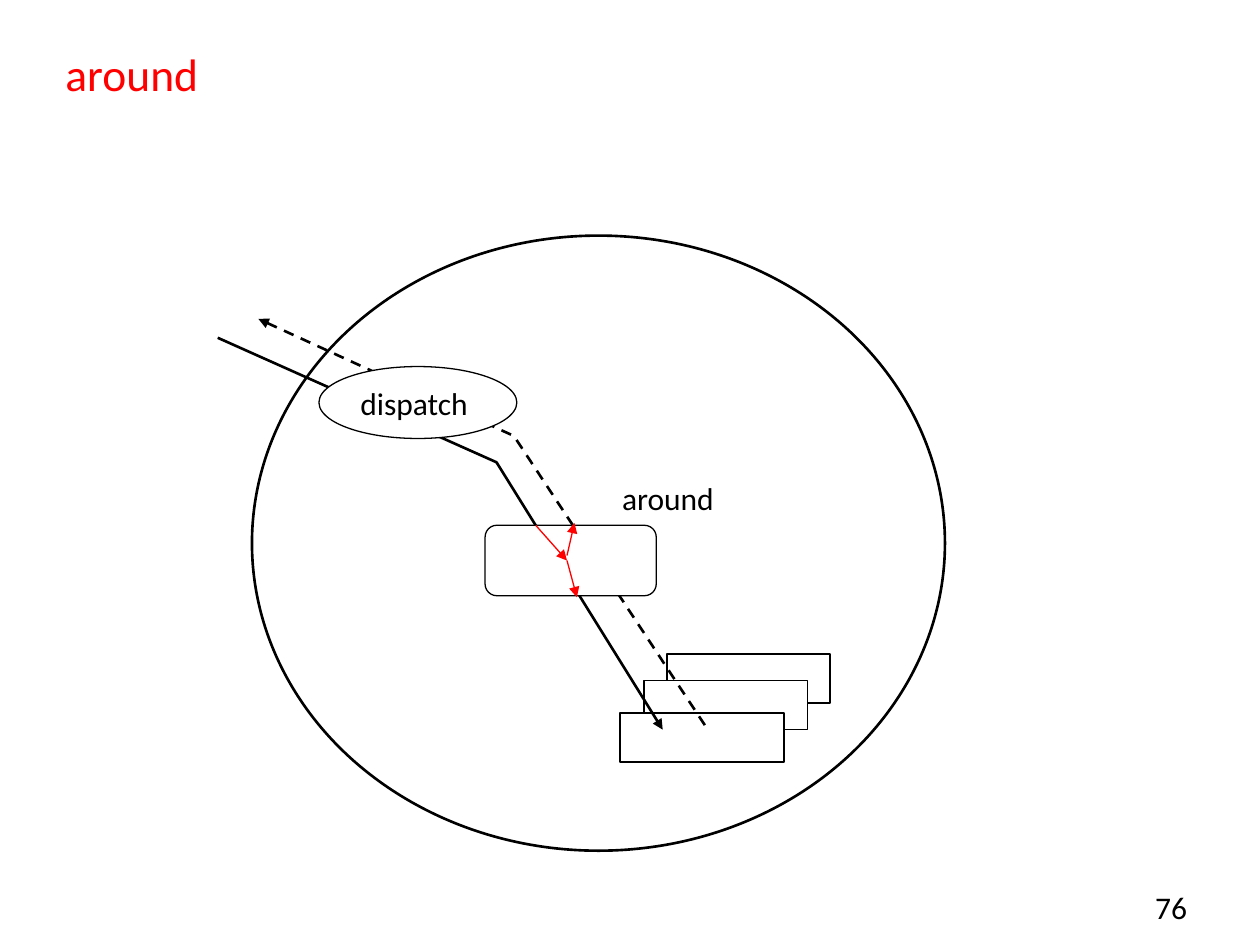
from dataclasses import dataclass

import pptx
import pptx.dml.color
import pptx.enum.dml
import pptx.enum.shapes
import pptx.enum.text
import pptx.oxml
import pptx.oxml.ns
import pptx.util

Cm = pptx.util.Cm
Kind = pptx.enum.shapes.MSO_SHAPE
Align = pptx.enum.text.PP_ALIGN
Anchor = pptx.enum.text.MSO_ANCHOR

FONT = "Calibri"
COLORS = {"ink": "000000", "red": "FF0000", "paper": "FFFFFF"}


@dataclass
class Box:
    left: float
    top: float
    width: float
    height: float

    def lengths(self) -> list:
        return [Cm(v) for v in (self.left, self.top, self.width, self.height)]


@dataclass
class Node:
    kind: int
    box: Box
    weight: float
    filled: bool = True
    text: str = ""


@dataclass
class Label:
    text: str
    box: Box
    size: int = 18
    color: str = "ink"
    align: int = Align.LEFT
    anchor: int = Anchor.TOP
    wrap: bool = True
    right: float = 0.25


@dataclass
class Route:
    points: list
    end: str
    dashed: bool = False


@dataclass
class Arrow:
    start: tuple
    stop: tuple


def rgb(name: str):
    return pptx.dml.color.RGBColor.from_string(COLORS[name])


def write(frame, text: str, size: int = 18, color: str = "ink",
          align: int = Align.LEFT) -> None:
    frame.text = text
    para = frame.paragraphs[0]
    para.alignment = align
    font = para.runs[0].font
    font.name = FONT
    font.size = pptx.util.Pt(size)
    font.color.rgb = rgb(color)


def stroke(item, weight: float, color: str = "ink") -> None:
    item.line.color.rgb = rgb(color)
    item.line.width = pptx.util.Pt(weight)


def add_tip(item, end: str) -> None:
    space = pptx.oxml.ns.nsdecls("a")
    tip = pptx.oxml.parse_xml(f'<a:{end} {space} type="triangle"/>')
    item.line._get_or_add_ln().append(tip)


def draw_node(slide, node: Node) -> None:
    shape = slide.shapes.add_shape(node.kind, *node.box.lengths())
    shape.shadow.inherit = False
    stroke(shape, node.weight)
    if node.filled:
        shape.fill.solid()
        shape.fill.fore_color.rgb = rgb("paper")
    else:
        shape.fill.background()
    if node.text:
        write(shape.text_frame, node.text)


def draw_label(slide, label: Label) -> None:
    frame = slide.shapes.add_textbox(*label.box.lengths()).text_frame
    frame.word_wrap = label.wrap
    frame.vertical_anchor = label.anchor
    frame.margin_right = Cm(label.right)
    write(frame, label.text, label.size, label.color, label.align)


def draw_route(slide, route: Route) -> None:
    points = [(Cm(x), Cm(y)) for x, y in route.points]
    pen = slide.shapes.build_freeform(*points[0])
    pen.add_line_segments(points[1:], close=False)
    shape = pen.convert_to_shape()
    shape.shadow.inherit = False
    shape.fill.background()
    stroke(shape, 1.5)
    if route.dashed:
        shape.line.dash_style = pptx.enum.dml.MSO_LINE.DASH
    add_tip(shape, route.end)


def draw_arrow(slide, arrow: Arrow) -> None:
    ends = [Cm(v) for v in arrow.start + arrow.stop]
    line = slide.shapes.add_connector(
        pptx.enum.shapes.MSO_CONNECTOR.STRAIGHT, *ends)
    stroke(line, 0.75, "red")
    add_tip(line, "tailEnd")
    space = pptx.oxml.ns.nsdecls("a")
    line._element.spPr.append(pptx.oxml.parse_xml(f"<a:effectLst {space}/>"))


LABELS = [
    Label("76", Box(22.43, 17.78, 1.9, 1.27), align=Align.RIGHT, right=0.4),
    Label("around", Box(1.07, 0.84, 23.06, 1.27), 26, "red",
          anchor=Anchor.MIDDLE),
    Label("around", Box(12.29, 9.53, 2.39, 1.02), wrap=False),
]
CARDS = [(13.44, 13.18), (12.98, 13.72), (12.5, 14.38)]
BACK = [Node(Kind.RECTANGLE, Box(x, y, 3.3, 0.99), 1) for x, y in CARDS]
BACK.append(Node(Kind.OVAL, Box(5.08, 4.75, 13.97, 12.4), 1.5, filled=False))
ROUTES = [
    Route([(4.39, 6.81), (10.01, 9.32), (13.36, 14.71)], "tailEnd"),
    Route([(5.21, 6.43), (10.36, 8.79), (14.27, 14.71)], "headEnd", True),
]
FRONT = [
    Node(Kind.OVAL, Box(6.43, 7.39, 3.99, 1.45), 0.75, text="dispatch"),
    Node(Kind.ROUNDED_RECTANGLE, Box(9.78, 10.59, 3.45, 1.42), 0.75),
]
ARROWS = [
    Arrow((11.43, 11.3), (11.63, 12.04)),
    Arrow((11.43, 11.2), (11.58, 10.54)),
    Arrow((10.8, 10.59), (11.43, 11.3)),
]


def main() -> None:
    deck = pptx.Presentation()
    deck.slide_width, deck.slide_height = Cm(25.4), Cm(19.05)
    slide = deck.slides.add_slide(deck.slide_layouts[6])
    for draw, items in (
        (draw_node, BACK),
        (draw_route, ROUTES),
        (draw_node, FRONT),
        (draw_label, LABELS),
        (draw_arrow, ARROWS),
    ):
        for item in items:
            draw(slide, item)
    deck.save("out.pptx")


if __name__ == "__main__":
    main()
